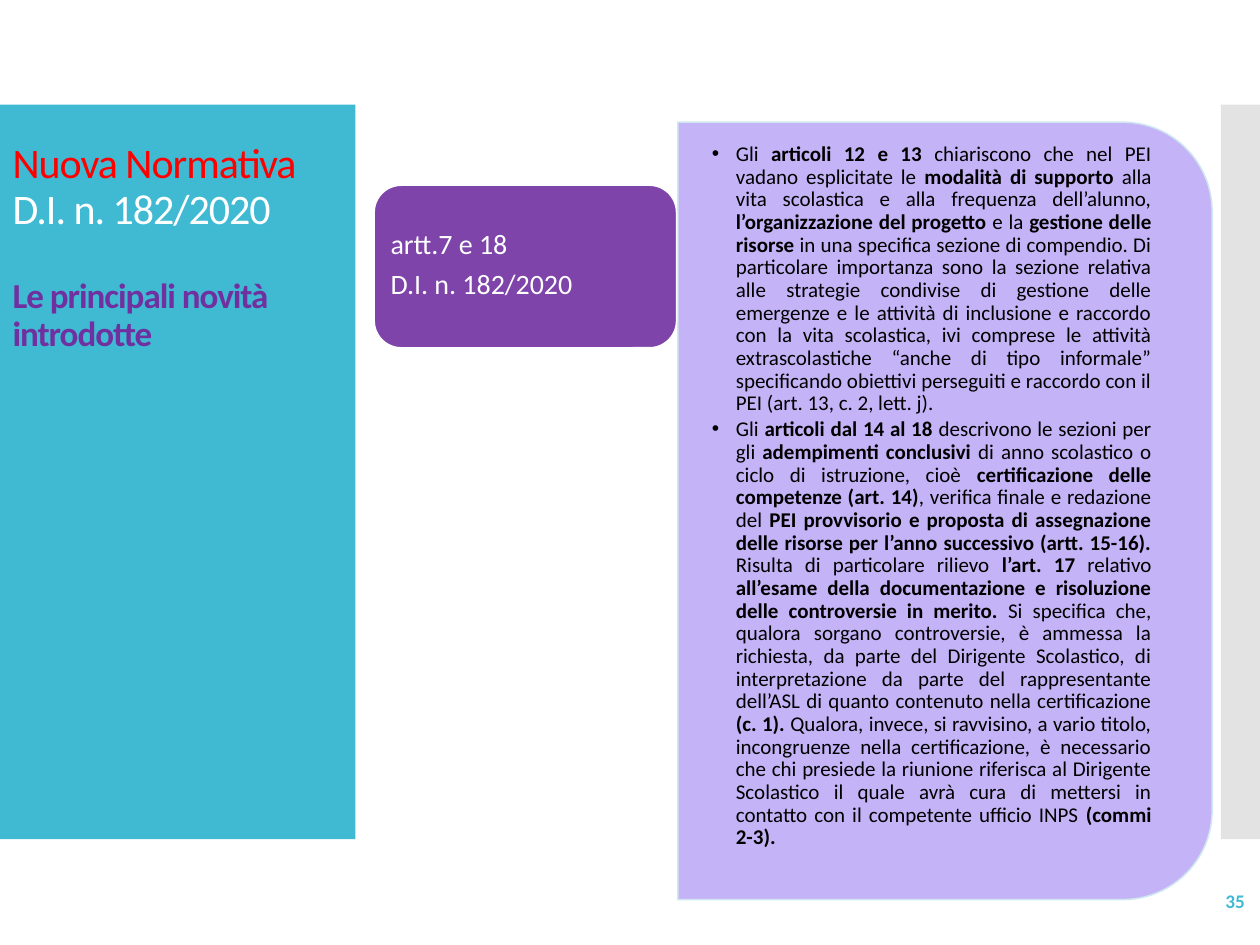
from lxml.etree import SubElement
from pptx import Presentation
from pptx.dml.color import RGBColor
from pptx.enum.shapes import MSO_SHAPE
from pptx.enum.text import MSO_ANCHOR, MSO_AUTO_SIZE, PP_ALIGN
from pptx.oxml.ns import qn
from pptx.util import Inches, Pt

TEAL, PURPLE, WHITE, BLACK = "40BAD2", "7030A0", "FFFFFF", "000000"

TITLE_LINES = [
    ("Nuova Normativa", 24, "FF0000", False, 0),
    ("D.I. n. 182/2020", 24, WHITE, False, 0),
    ("Le principali novità introdotte", 20, PURPLE, True, 26),
]

PLAIN_BOLD_ARTICLES = [
    [
        ("Gli ", "articoli 12 e 13 "),
        ("chiariscono che nel PEI vadano esplicitate le ", "modalità di supporto"),
        (" alla vita scolastica e alla frequenza dell’alunno, ",
         "l’organizzazione del progetto "),
        ("e la ", "gestione delle risorse"),
        (" in una specifica sezione di compendio. Di particolare importanza sono la "
         "sezione relativa alle strategie condivise di gestione delle emergenze e le "
         "attività di inclusione e raccordo con la vita scolastica, ivi comprese le "
         "attività extrascolastiche “anche di tipo informale” specificando obiettivi "
         "perseguiti e raccordo con il PEI (art. 13, c. 2, lett. j).", ""),
    ],
    [
        ("Gli ", "articoli dal 14 al 18 "),
        ("descrivono le sezioni per gli ", "adempimenti conclusivi "),
        ("di anno scolastico o ciclo di istruzione, cioè ",
         "certificazione delle competenze (art. 14)"),
        (", verifica finale e redazione del ",
         "PEI provvisorio e proposta di assegnazione delle risorse per l’anno "
         "successivo (artt. 15-16). "),
        ("Risulta di particolare rilievo ", "l’art. 17 "),
        ("relativo ", "all’esame della documentazione e risoluzione delle "
                      "controversie in merito. "),
        ("Si specifica che, qualora sorgano controversie, è ammessa la richiesta, da "
         "parte del Dirigente Scolastico, di interpretazione da parte del "
         "rappresentante dell’ASL di quanto contenuto nella certificazione ",
         "(c. 1). "),
        ("Qualora, invece, si ravvisino, a vario titolo, incongruenze nella "
         "certificazione, è necessario che chi presiede la riunione riferisca al "
         "Dirigente Scolastico il quale avrà cura di mettersi in contatto con il "
         "competente ufficio INPS ", "(commi 2-3)."),
    ],
]


def color(hex_value):
    """Turn a hex string into a colour."""
    return RGBColor.from_string(hex_value)


def set_alpha(shape, percent):
    """Make the solid fill of a shape partly transparent."""
    color_element = shape.element.spPr.find(qn("a:solidFill"))[0]
    SubElement(color_element, qn("a:alpha")).set("val", str(percent * 1000))


def add_block(slide, kind, box, fill, opacity=100, line=None):
    """Add a filled preset shape in a box given in inches."""
    shape = slide.shapes.add_shape(kind, *map(Inches, box))
    shape.shadow.inherit = False
    shape.fill.solid()
    shape.fill.fore_color.rgb = color(fill)
    if opacity < 100:
        set_alpha(shape, opacity)
    if line:
        shape.line.color.rgb = color(line)
        shape.line.width = Pt(0.85)
    else:
        shape.line.fill.background()
    return shape


def place(shape, box):
    """Move a shape to a box given in inches."""
    shape.left, shape.top, shape.width, shape.height = map(Inches, box)


def set_frame(text_frame, margins, anchor=MSO_ANCHOR.MIDDLE):
    """Set wrapping, anchor and margins (left, top, right, bottom) in inches."""
    text_frame.word_wrap = True
    text_frame.auto_size = MSO_AUTO_SIZE.NONE
    text_frame.vertical_anchor = anchor
    (text_frame.margin_left, text_frame.margin_top,
     text_frame.margin_right, text_frame.margin_bottom) = map(Inches, margins)


def set_paragraph(paragraph, align, before=0, after=0, spacing=0.9):
    """Set the alignment and spacing of a paragraph."""
    paragraph.alignment = align
    paragraph.line_spacing = spacing
    paragraph.space_before = Pt(before)
    paragraph.space_after = Pt(after)


def style_run(run, size, hex_value, bold=False):
    """Set the font of a run."""
    run.font.name = "Calibri"
    run.font.size = Pt(size)
    run.font.bold = bold
    run.font.color.rgb = color(hex_value)


def set_bullet(paragraph, indent):
    """Give a paragraph a hanging round bullet."""
    properties = paragraph._p.get_or_add_pPr()
    properties.set("marL", str(Inches(indent)))
    properties.set("indent", str(-Inches(indent)))
    SubElement(properties, qn("a:buFont")).set("typeface", "Arial")
    SubElement(properties, qn("a:buChar")).set("char", "•")


def paragraphs_for(text_frame, items):
    """Yield a paragraph for each item, using the first one already there."""
    for index, item in enumerate(items):
        yield (text_frame.add_paragraph() if index else text_frame.paragraphs[0]), item


def add_title(slide, box):
    """Draw the teal side panel with the title over it."""
    left, top, width, height = box
    panel = add_block(slide, MSO_SHAPE.RECTANGLE, box, TEAL)
    title = slide.shapes.title
    panel.element.addnext(title.element)
    place(title, (left, top - 0.15, width - 0.12, 3.31))
    set_frame(title.text_frame, (0.1, 0.45, 0.1, 0.05), MSO_ANCHOR.TOP)
    for paragraph, line in paragraphs_for(title.text_frame, TITLE_LINES):
        text, size, hex_value, bold, before = line
        paragraph.text = text
        set_paragraph(paragraph, PP_ALIGN.LEFT, before)
        style_run(paragraph.runs[0], size, hex_value, bold)
        paragraph.runs[0]._r.get_or_add_rPr().set("spc", "-60")


def add_articles(slide, box):
    """Draw the lilac panel, rounded on the right, with the bulleted list."""
    left, top, width, height = box
    turned_box = (left + (width - height) / 2, top + (height - width) / 2, height, width)
    panel = add_block(slide, MSO_SHAPE.ROUND_2_SAME_RECTANGLE, turned_box,
                      "BFABF7", 90, "CFE7EE")
    panel.rotation = 90
    body = slide.placeholders[1]
    panel.element.addnext(body.element)
    place(body, (left, top + 0.2, width - 0.21, height - 0.41))
    set_frame(body.text_frame, (0.27, 0, 0.27, 0.22))
    for paragraph, article in paragraphs_for(body.text_frame, PLAIN_BOLD_ARTICLES):
        set_paragraph(paragraph, PP_ALIGN.JUSTIFY, after=1.8)
        set_bullet(paragraph, 0.19)
        for pair in article:
            for text, bold in zip(pair, (False, True)):
                if text:
                    run = paragraph.add_run()
                    run.text = text
                    style_run(run, 12, BLACK, bold)


def add_label(slide, box):
    """Draw the purple label naming the articles."""
    left, top, width, height = box
    add_block(slide, MSO_SHAPE.ROUNDED_RECTANGLE, box, PURPLE, 90, WHITE)
    inner_box = (left + 0.06, top + 0.06, width - 0.13, height - 0.13)
    text_frame = slide.shapes.add_textbox(*map(Inches, inner_box)).text_frame
    set_frame(text_frame, (0.07, 0.03, 0.07, 0.03))
    for paragraph, text in paragraphs_for(text_frame, ["artt.7 e 18", "D.I. n. 182/2020"]):
        paragraph.text = text
        set_paragraph(paragraph, PP_ALIGN.JUSTIFY, after=5.6)
        style_run(paragraph.runs[0], 16, WHITE)


def add_page_number(slide, box):
    """Write the page number at the right of its box."""
    text_frame = slide.shapes.add_textbox(*map(Inches, box)).text_frame
    set_frame(text_frame, (0.1, 0.05, 0.1, 0.05))
    paragraph = text_frame.paragraphs[0]
    paragraph.text = "35"
    set_paragraph(paragraph, PP_ALIGN.RIGHT, spacing=1.0)
    style_run(paragraph.runs[0], 11, TEAL, True)


def main():
    """Build the slide and save it."""
    presentation = Presentation()
    presentation.slide_width, presentation.slide_height = Inches(10), Inches(7.5)
    slide = presentation.slides.add_slide(presentation.slide_layouts[1])
    add_block(slide, MSO_SHAPE.RECTANGLE, (9.69, 0.83, 0.31, 5.83), "C8C8C8", 50)
    add_title(slide, (0, 0.83, 2.82, 5.83))
    add_articles(slide, (5.38, 0.97, 4.24, 6.17))
    add_label(slide, (2.97, 1.47, 2.4, 1.29))
    add_page_number(slide, (8.72, 6.95, 1.26, 0.4))
    presentation.save("out.pptx")


if __name__ == "__main__":
    main()
